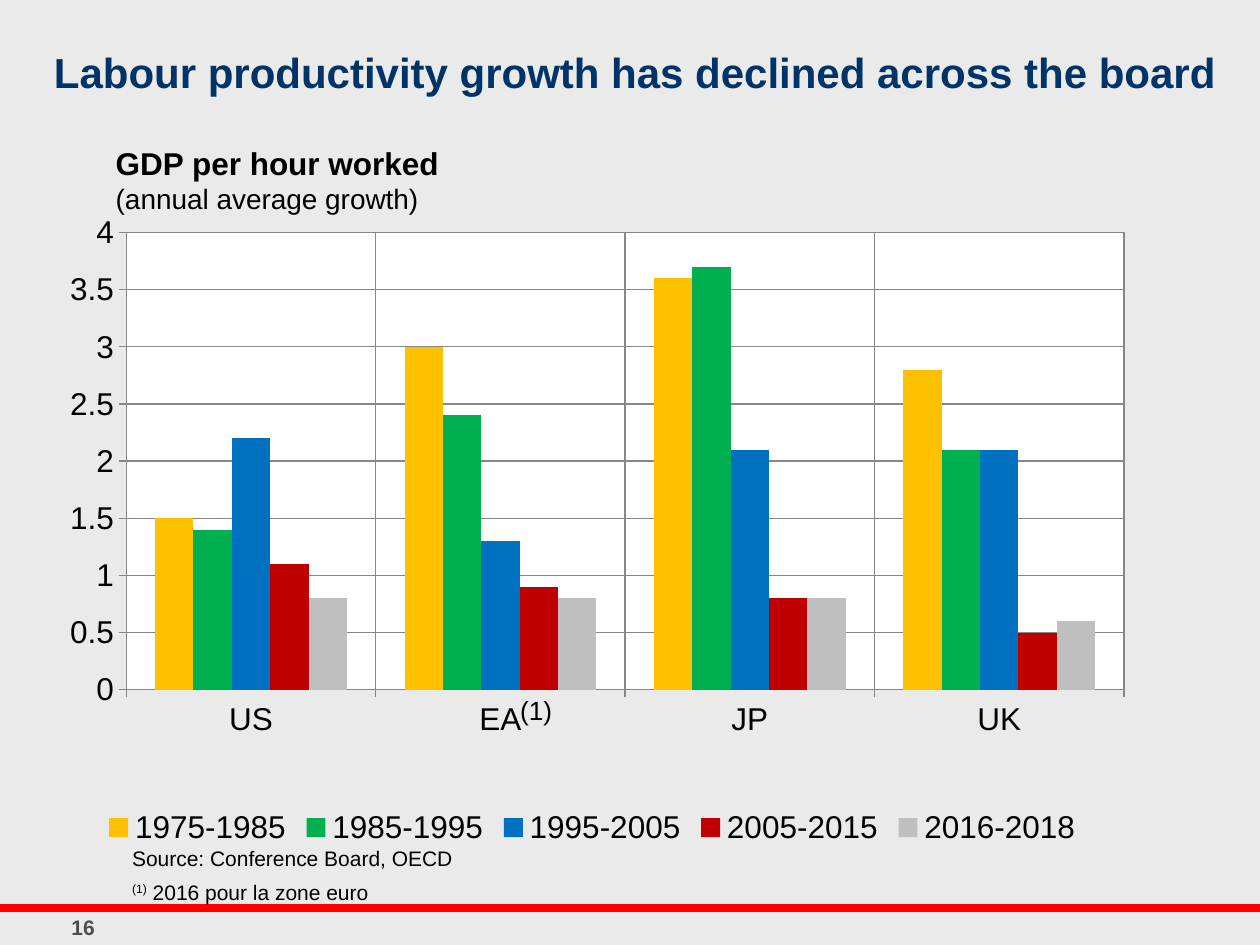
from dataclasses import dataclass

from lxml.etree import SubElement
from pptx import Presentation
from pptx.chart.data import CategoryChartData
from pptx.dml.color import RGBColor
from pptx.enum.chart import XL_CHART_TYPE, XL_LEGEND_POSITION, XL_TICK_MARK
from pptx.enum.shapes import MSO_CONNECTOR
from pptx.enum.text import MSO_ANCHOR, PP_ALIGN
from pptx.oxml import parse_xml
from pptx.oxml.ns import nsdecls, qn
from pptx.util import Inches, Pt


@dataclass(frozen=True)
class Theme:
    font: str = "Arial"
    background: str = "EAEAEA"
    plot: str = "FFFFFF"
    text: str = "000000"
    title: str = "003366"
    number: str = "4D4D4D"
    rule: str = "FF0000"
    grid: str = "878787"
    title_size: int = 24
    heading_size: int = 18
    subheading_size: int = 16
    marker_size: int = 15
    note_size: int = 12


@dataclass(frozen=True)
class Line:
    text: str
    size: int
    color: str
    bold: bool = False
    superscript: str = ""
    space_before: int = 0


@dataclass(frozen=True)
class Period:
    name: str
    growth: tuple[float, ...]
    color: str


THEME = Theme()
COUNTRIES = ("US", "EA", "JP", "UK")
PERIODS = (
    Period("1975-1985", (1.5, 3.0, 3.6, 2.8), "FFC000"),
    Period("1985-1995", (1.4, 2.4, 3.7, 2.1), "00B050"),
    Period("1995-2005", (2.2, 1.3, 2.1, 2.1), "0070C0"),
    Period("2005-2015", (1.1, 0.9, 0.8, 0.5), "C00000"),
    Period("2016-2018", (0.8, 0.8, 0.8, 0.6), "BFBFBF"),
)


def rgb(color: str) -> RGBColor:
    return RGBColor.from_string(color)


def add_text(page, left: float, top: float, width: float, height: float,
             lines: list[Line], align=PP_ALIGN.LEFT, anchor=MSO_ANCHOR.TOP) -> None:
    box = page.shapes.add_textbox(Inches(left), Inches(top), Inches(width), Inches(height))
    frame = box.text_frame
    frame.word_wrap = True
    frame.vertical_anchor = anchor
    for index, line in enumerate(lines):
        para = frame.add_paragraph() if index else frame.paragraphs[0]
        para.alignment = align
        if line.space_before:
            para.space_before = Pt(line.space_before)
        if line.superscript:
            span = para.add_run()
            span.text = line.superscript
            span.font._element.set("baseline", "30000")
        para.add_run().text = line.text
        # Run-level fonts are inherited from the paragraph
        para.font.name = THEME.font
        para.font.size = Pt(line.size)
        para.font.bold = line.bold
        para.font.color.rgb = rgb(line.color)


def add_rule(page, top: float) -> None:
    rule = page.shapes.add_connector(
        MSO_CONNECTOR.STRAIGHT, Inches(0), Inches(top), Inches(10), Inches(top))
    rule.line.color.rgb = rgb(THEME.rule)
    rule.line.width = Pt(4.5)
    SubElement(rule._element.spPr, qn("a:effectLst"))


def style_axis(axis) -> None:
    axis.has_major_gridlines = True
    axis.major_tick_mark = XL_TICK_MARK.OUTSIDE
    axis.minor_tick_mark = XL_TICK_MARK.NONE
    for line in (axis.format.line, axis.major_gridlines.format.line):
        line.color.rgb = rgb(THEME.grid)
        line.width = Pt(0.75)


def style_plot_area(chart) -> None:
    """Fix the inner plot position and fill it."""
    area = chart._chartSpace.chart.plotArea
    for old in area.findall(qn("c:layout")):
        area.remove(old)
    places = {"x": 0.077, "y": 0.044, "w": 0.906, "h": 0.706}
    modes = "".join(f'<c:{key}Mode val="edge"/>' for key in "xy")
    values = "".join(f'<c:{key} val="{value}"/>' for key, value in places.items())
    area.insert(0, parse_xml(
        f'<c:layout {nsdecls("c")}><c:manualLayout><c:layoutTarget val="inner"/>'
        f"{modes}{values}</c:manualLayout></c:layout>"))
    area.append(parse_xml(
        f'<c:spPr {nsdecls("c", "a")}><a:solidFill><a:srgbClr val="{THEME.plot}"/></a:solidFill>'
        f'<a:ln w="9525"><a:solidFill><a:srgbClr val="{THEME.grid}"/></a:solidFill></a:ln></c:spPr>'))


def add_growth_chart(page) -> None:
    data = CategoryChartData()
    data.categories = COUNTRIES
    for period in PERIODS:
        data.add_series(period.name, period.growth)
    chart = page.shapes.add_chart(
        XL_CHART_TYPE.COLUMN_CLUSTERED,
        Inches(0.33), Inches(1.62), Inches(8.74), Inches(5.14), data).chart
    chart.has_title = False
    chart.font.name = THEME.font
    chart.font.size = Pt(THEME.heading_size)
    chart.font.color.rgb = rgb(THEME.text)
    chart.has_legend = True
    chart.legend.position = XL_LEGEND_POSITION.BOTTOM
    chart.legend.include_in_layout = False
    plot = chart.plots[0]
    plot.gap_width = 150
    plot.overlap = 0
    plot.vary_by_categories = False
    for series, period in zip(plot.series, PERIODS):
        series.format.fill.solid()
        series.format.fill.fore_color.rgb = rgb(period.color)
    for axis in (chart.category_axis, chart.value_axis):
        style_axis(axis)
    chart.value_axis.minimum_scale = 0
    chart.value_axis.maximum_scale = 4
    chart.value_axis.major_unit = 0.5
    style_plot_area(chart)


def main() -> None:
    deck = Presentation()
    deck.slide_width, deck.slide_height = Inches(10), Inches(7.5)
    page = deck.slides.add_slide(deck.slide_layouts[6])
    page.background.fill.solid()
    page.background.fill.fore_color.rgb = rgb(THEME.background)

    add_rule(page, 7.21)
    add_text(page, 0.22, 7.21, 0.88, 0.29,
             [Line("16", THEME.note_size, THEME.number, bold=True)], PP_ALIGN.CENTER)
    add_growth_chart(page)
    add_text(page, 0.95, 6.66, 4.06, 0.57, [
        Line("Source: Conference Board, OECD", THEME.note_size, THEME.text),
        Line(" 2016 pour la zone euro", THEME.note_size, THEME.text,
             superscript="(1)", space_before=5),
    ])
    add_text(page, 0.82, 1.09, 8.31, 0.67, [
        Line("GDP per hour worked", THEME.heading_size, THEME.text, bold=True),
        Line("(annual average growth)", THEME.subheading_size, THEME.text),
    ])
    add_text(page, 0.33, 0.15, 9.67, 0.84,
             [Line("Labour productivity growth has declined across the board",
                   THEME.title_size, THEME.title, bold=True)], anchor=MSO_ANCHOR.MIDDLE)
    add_text(page, 3.97, 5.46, 0.57, 0.35,
             [Line("(1)", THEME.marker_size, THEME.text)], PP_ALIGN.CENTER)
    deck.save("out.pptx")


if __name__ == "__main__":
    main()
